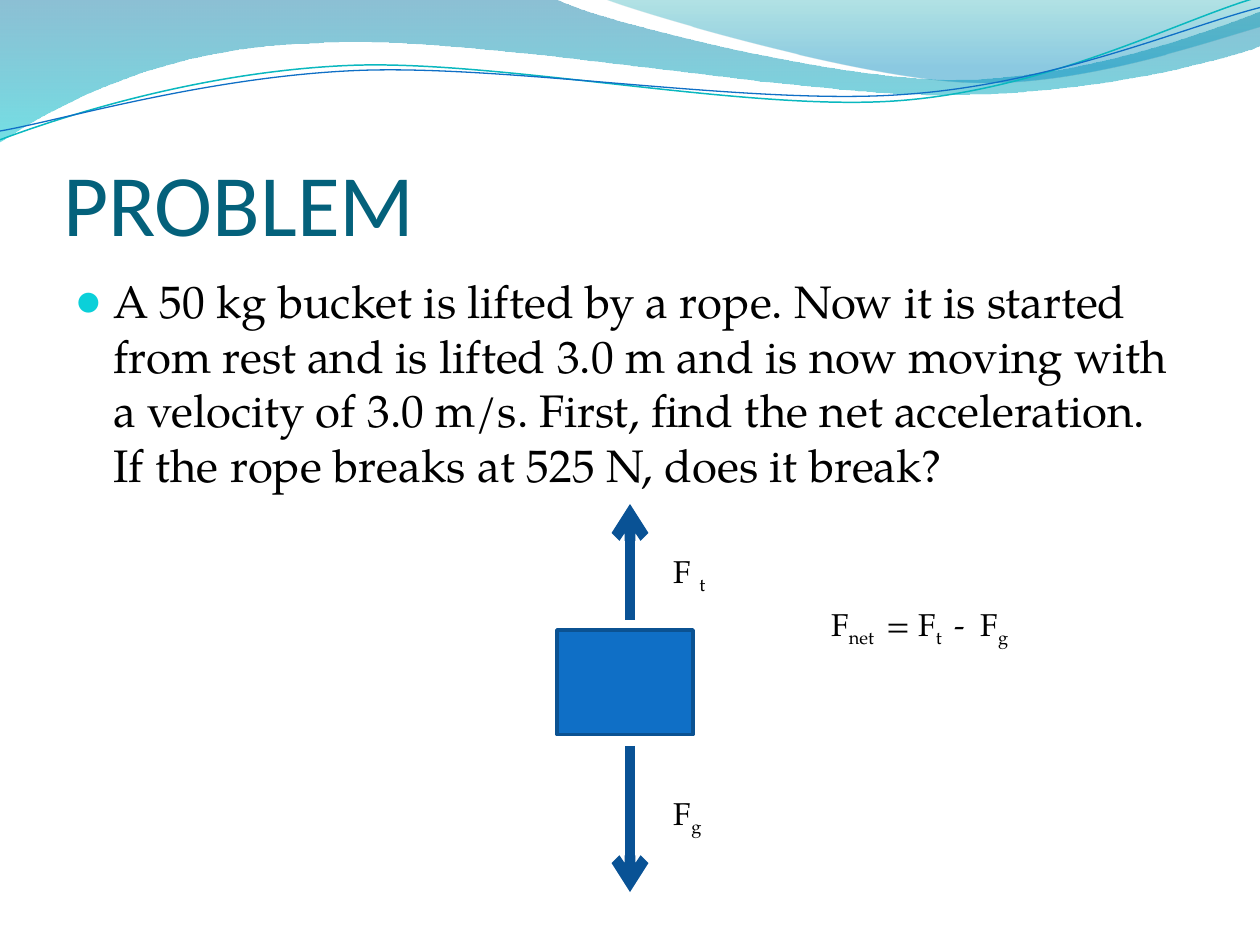
from lxml.etree import SubElement
from pptx import Presentation
from pptx.dml.color import RGBColor
from pptx.enum.shapes import MSO_CONNECTOR, MSO_SHAPE
from pptx.enum.text import MSO_ANCHOR, MSO_AUTO_SIZE, PP_ALIGN
from pptx.oxml.ns import qn
from pptx.util import Inches, Pt

SERIF = "TeX Gyre Pagella"


def color(hex_string):
    return RGBColor.from_string(hex_string)


def draw_wave(shapes, start, segments, close):
    builder = shapes.build_freeform(Inches(start[0]), Inches(start[1]))
    ends = [(Inches(segment[-2]), Inches(segment[-1])) for segment in segments]
    builder.add_line_segments(ends, close=close)
    wave = builder.convert_to_shape()
    wave.shadow.inherit = False
    edges = list(wave._element.spPr.iter(qn("a:lnTo")))
    for edge, segment in zip(edges, segments):
        if len(segment) == 2:
            continue
        edge.tag = qn("a:cubicBezTo")
        edge.remove(edge[0])
        for x, y in zip(segment[::2], segment[1::2]):
            SubElement(edge, qn("a:pt"), x=str(Inches(x) - wave.left),
                       y=str(Inches(y) - wave.top))
    return wave


deck = Presentation()
deck.slide_width, deck.slide_height = Inches(10), Inches(7.5)
slide = deck.slides.add_slide(deck.slide_layouts[5])
shapes = slide.shapes

bands = [
    ((0, 0), [(4.4, -0.01), (4.76, 0.17, 6.64, 0.63, 7.58, 0.63),
              (8.53, 0.63, 9.58, 0.26, 10, 0.09), (10.01, 0.36),
              (9.83, 0.44, 8.7, 0.76, 7.46, 0.75),
              (6.22, 0.75, 3.82, 0.28, 2.57, 0.34),
              (1.29, 0.36, 0.46, 0.83, -0.01, 1.13)],
     [(0, "0074A1", 45), (1, "00C6CF", 55)]),
    ((4.79, -0.01), [(5.09, 0.11, 6.82, 0.62, 7.69, 0.65),
                     (8.56, 0.69, 9.61, 0.32, 10, 0.21), (10, 0)],
     [(0, "00A1A9", 30), (0.8, "008BBF", 45)]),
]
for start, segments, stops in bands:
    band = draw_wave(shapes, start, segments, True)
    band.line.fill.background()
    band.fill.gradient()
    band.fill.gradient_angle = 270
    for stop, (position, hex_string, opacity) in zip(band.fill.gradient_stops, stops):
        stop.position = position
        stop.color.rgb = color(hex_string)
    tints = band._element.spPr.iter(qn("a:srgbClr"))
    for tint, (_, _, opacity) in zip(tints, stops):
        SubElement(tint, qn("a:alpha"), val=str(opacity * 1000))

ripples = [
    ((0, 1.11), [(0.48, 0.93, 1.58, 0.57, 2.77, 0.52),
                 (3.95, 0.47, 5.93, 0.89, 7.13, 0.8),
                 (8.33, 0.71, 9.38, 0.15, 9.98, -0.02)], "0AB8BF", 0.85),
    ((0, 1.04), [(0.47, 0.96, 1.64, 0.61, 2.83, 0.56),
                 (4.03, 0.51, 5.97, 0.84, 7.17, 0.75),
                 (8.36, 0.67, 9.41, 0.21, 10, 0.06)], "0F6FC6", 0.75),
]
for start, segments, hex_string, width in ripples:
    ripple = draw_wave(shapes, start, segments, False)
    ripple.fill.background()
    ripple.line.color.rgb = color(hex_string)
    ripple.line.width = Pt(width)

title = shapes.title
title.left, title.top = Inches(0.5), Inches(0.77)
title.width, title.height = Inches(9), Inches(1.25)
frame = title.text_frame
frame.text = "PROBLEM"
frame.vertical_anchor = MSO_ANCHOR.BOTTOM
frame.auto_size = MSO_AUTO_SIZE.NONE
frame.margin_left = frame.margin_right = frame.margin_bottom = 0
para = frame.paragraphs[0]
para.alignment = PP_ALIGN.LEFT
font = para.runs[0].font
font.name, font.size = "Calibri", Pt(50)
font.color.rgb = color("04617B")

body = shapes.add_textbox(Inches(0.5), Inches(2.12), Inches(9), Inches(4.8))
body.text_frame.word_wrap = True
para = body.text_frame.paragraphs[0]
para.text = (
    "A 50 kg bucket is lifted by a rope. Now it is started from rest and is "
    "lifted 3.0 m and is now moving with a velocity of 3.0 m/s. First, find the "
    "net acceleration. If the rope breaks at 525 N, does it break?"
)
para.space_before = Pt(5.2)
font = para.runs[0].font
font.name, font.size = SERIF, Pt(26)
font.color.rgb = color("000000")
props = para._p.get_or_add_pPr()
props.set("marL", str(Inches(0.3)))
props.set("indent", str(Inches(-0.3)))
bullet_color = SubElement(props, qn("a:buClr"))
SubElement(bullet_color, qn("a:srgbClr"), val="0BD0D9")
SubElement(props, qn("a:buSzPct"), val="95000")
SubElement(props, qn("a:buFont"), typeface="Calibri")
SubElement(props, qn("a:buChar"), char="●")

bucket = shapes.add_shape(MSO_SHAPE.RECTANGLE, Inches(4.42), Inches(5),
                          Inches(1.08), Inches(0.83))
bucket.shadow.inherit = False
bucket.fill.solid()
bucket.fill.fore_color.rgb = color("0F6FC6")
bucket.line.color.rgb = color("0B5292")
bucket.line.width = Pt(2)

for begin_y, end_y in [(5.92, 7.08), (4.92, 4)]:
    force = shapes.add_connector(MSO_CONNECTOR.STRAIGHT, Inches(5), Inches(begin_y),
                                 Inches(5), Inches(end_y))
    force.line.color.rgb = color("095295")
    force.line.width = Pt(6)
    SubElement(force.line._get_or_add_ln(), qn("a:tailEnd"), type="arrow")
    SubElement(force._element.spPr, qn("a:effectLst"))

labels = [
    (5.25, 4.33, 0.5, ["F ", "t"]),
    (5.25, 6.25, 0.75, ["F", "g"]),
    (6.5, 4.75, 2.83, ["F", "net ", " = F", "t ", " -  F", "g"]),
]
for left, top, width, pieces in labels:
    label = shapes.add_textbox(Inches(left), Inches(top), Inches(width), Inches(0.4))
    label.text_frame.word_wrap = True
    label.text_frame.auto_size = MSO_AUTO_SIZE.SHAPE_TO_FIT_TEXT
    para = label.text_frame.paragraphs[0]
    for index, piece in enumerate(pieces):
        span = para.add_run()
        span.text = piece
        span.font.name, span.font.size = SERIF, Pt(18)
        span.font.color.rgb = color("000000")
        if index % 2:
            span._r.get_or_add_rPr().set("baseline", "-25000")

deck.save("out.pptx")
